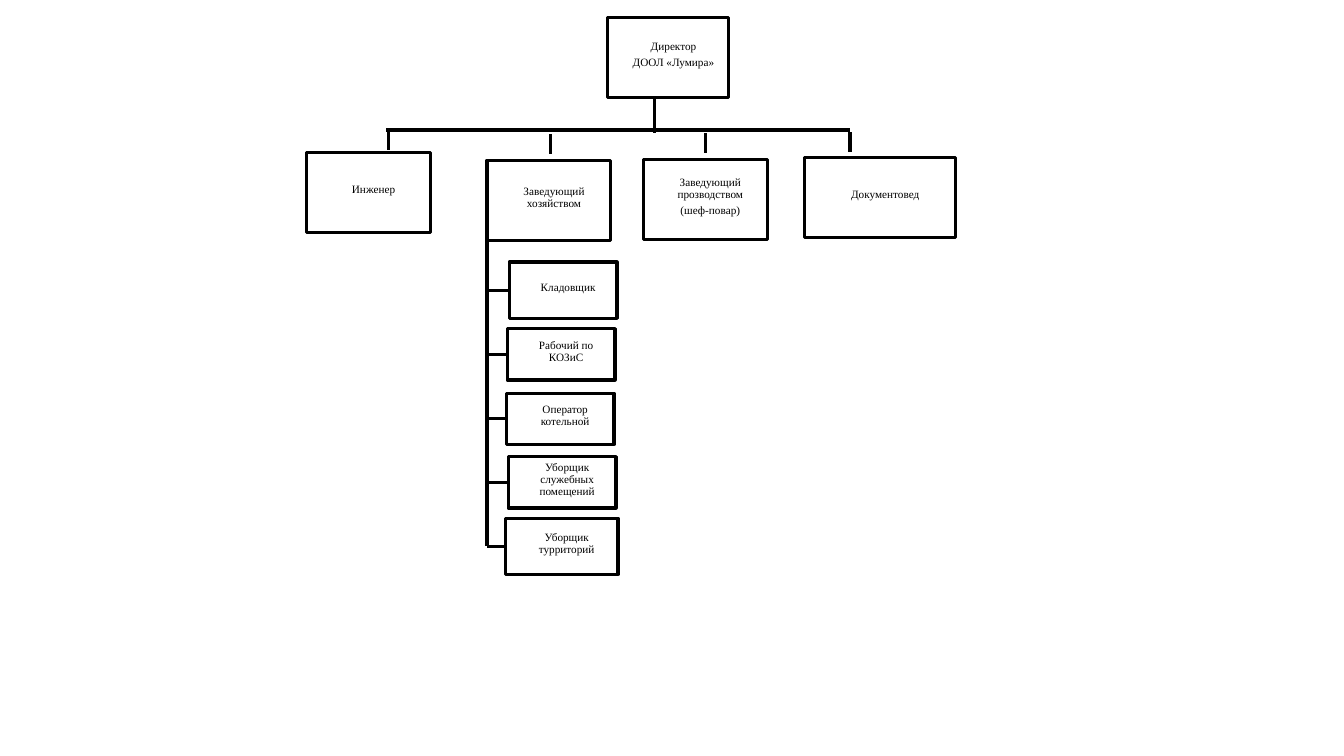
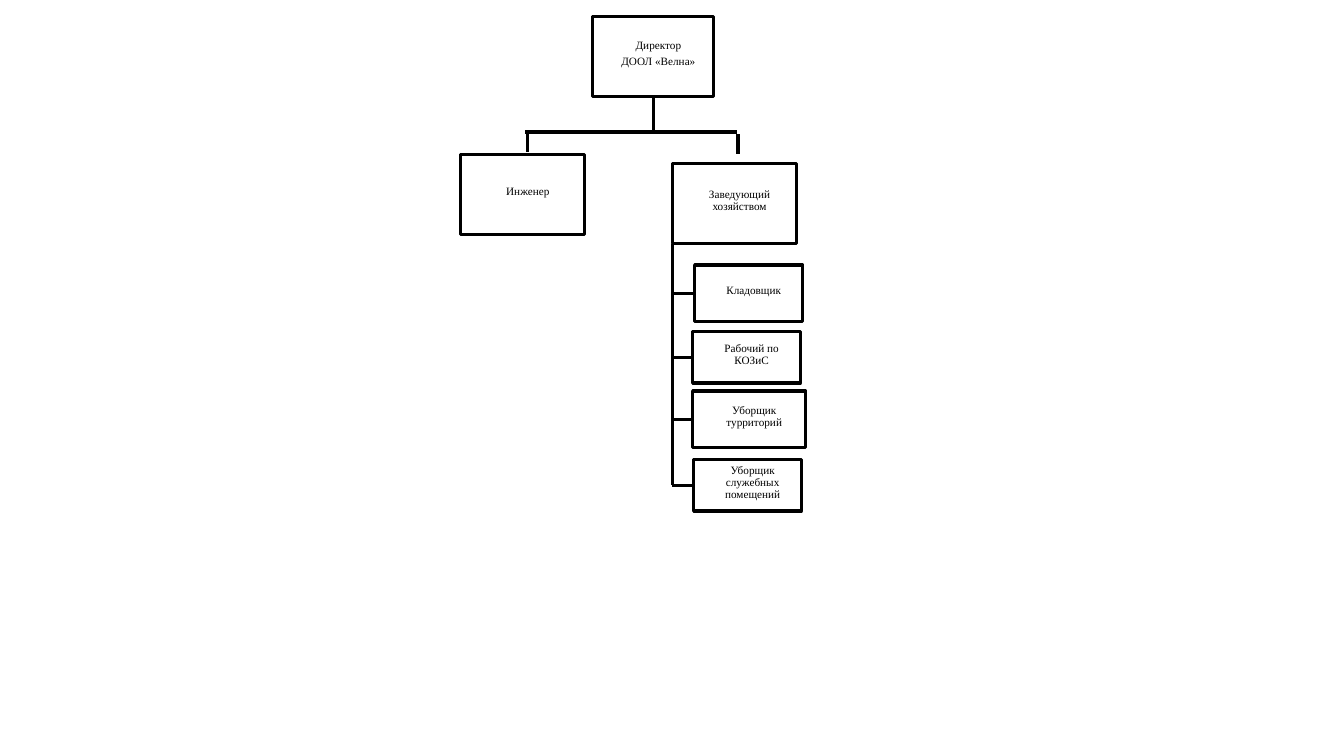
from pptx import Presentation
from pptx.dml.color import RGBColor
from pptx.enum.shapes import MSO_CONNECTOR, MSO_SHAPE
from pptx.enum.text import MSO_ANCHOR, PP_ALIGN
from pptx.oxml.ns import qn
from pptx.util import Inches, Pt
from lxml.etree import SubElement

COLORS = {"paper": "FFFFFF", "ink": "000000"}
FRAME_FORMAT = {
    "word_wrap": True,
    "vertical_anchor": MSO_ANCHOR.MIDDLE,
    "margin_left": Inches(0.2),
    "margin_top": Inches(0.01),
    "margin_right": Inches(0.1),
    "margin_bottom": Inches(0.06),
}
PARAGRAPH_FORMAT = {
    "alignment": PP_ALIGN.CENTER,
    "line_spacing": 0.9,
    "space_after": Pt(2.8),
}
FONT_FORMAT = {"name": "Times New Roman", "size": Pt(8)}
BOTTOM, LEFT = 2, 1
LINE_WIDTH = Pt(2.25)
DROP_LENGTH = 0.2
STEM_X, STEM_TOP, STEM_END = 6.49, 0.97, 1.32
JOIN_TOLERANCE = 0.02

# Boxes are (text, left, top, width, height); drops are (x, top).
CHARTS = [
    {
        "director": ("Директор\nДООЛ «Лумира»", 6.03, 0.17, 1.2, 0.8),
        "heads": [
            ("Инженер", 3.04, 1.51, 1.23, 0.8),
            ("Заведующий прозводством\n(шеф-повар)", 6.38, 1.58, 1.23, 0.8),
            ("Документовед", 7.98, 1.56, 1.5, 0.8),
        ],
        "steward": ("Заведующий хозяйством", 4.83, 1.59, 1.23, 0.8),
        "staff": [
            ("Кладовщик", 5.05, 2.6, 1.07, 0.56),
            ("Рабочий по КОЗиС", 5.03, 3.26, 1.07, 0.51),
            ("Оператор котельной", 5.02, 3.9, 1.07, 0.51),
            ("Уборщик служебных помещений", 5.04, 4.53, 1.07, 0.51),
            ("Уборщик турриторий", 5.01, 5.14, 1.12, 0.56),
        ],
        "bar": (3.83, 8.43, 1.29),
        "drops": [(3.85, 1.29), (5.46, 1.33), (7, 1.32), (8.43, 1.31)],
    },
    {
        "director": ("Директор\nДООЛ «Велна»", 5.88, 0.16, 1.2, 0.8),
        "heads": [("Инженер", 4.57, 1.53, 1.23, 0.8)],
        "steward": ("Заведующий хозяйством", 6.67, 1.62, 1.23, 0.8),
        "staff": [
            ("Кладовщик", 6.89, 2.63, 1.07, 0.56),
            ("Рабочий по КОЗиС", 6.87, 3.29, 1.07, 0.51),
            ("Уборщик турриторий", 6.87, 3.88, 1.12, 0.56),
            ("Уборщик служебных помещений", 6.88, 4.56, 1.07, 0.51),
        ],
        "bar": (5.21, 7.31, 1.31),
        "drops": [(5.23, 1.31), (7.32, 1.33)],
    },
]


def color(key):
    return RGBColor.from_string(COLORS[key])


def apply_format(target, values):
    for attribute, value in values.items():
        setattr(target, attribute, value)


class OrgChartDeck:
    def __init__(self):
        self.presentation = Presentation()
        self.presentation.slide_width = Inches(13.33)
        self.presentation.slide_height = Inches(7.5)
        self.slide = None

    def new_slide(self):
        blank_layout = self.presentation.slide_layouts[6]
        self.slide = self.presentation.slides.add_slide(blank_layout)

    def outline(self, line):
        line.color.rgb = color("ink")
        line.width = LINE_WIDTH

    def position(self, text, left, top, width, height):
        """Draw one job position as a framed box."""
        box = self.slide.shapes.add_shape(
            MSO_SHAPE.RECTANGLE, *map(Inches, (left, top, width, height)))
        box.shadow.inherit = False
        box.fill.solid()
        box.fill.fore_color.rgb = color("paper")
        self.outline(box.line)
        frame = box.text_frame
        apply_format(frame, FRAME_FORMAT)
        frame.text = text
        for paragraph in frame.paragraphs:
            apply_format(paragraph, PARAGRAPH_FORMAT)
            apply_format(paragraph.font, FONT_FORMAT)
            paragraph.font.color.rgb = color("ink")
        return box

    def link(self, x1, y1, x2, y2):
        connector = self.slide.shapes.add_connector(
            MSO_CONNECTOR.STRAIGHT, *map(Inches, (x1, y1, x2, y2)))
        self.outline(connector.line)
        SubElement(connector._element.spPr, qn("a:effectLst"))
        return connector

    def stem(self, director_data):
        """Draw the director and the line below, joined where it is centred."""
        director = self.position(*director_data)
        stem = self.link(STEM_X, STEM_TOP, STEM_X, STEM_END)
        _, left, _, width, _ = director_data
        if abs(left + width / 2 - STEM_X) <= JOIN_TOLERANCE:
            stem.begin_connect(director, BOTTOM)
            stem.end_x = stem.begin_x

    def staff_tree(self, steward, staff):
        """Draw a head whose left edge runs down to the staff below."""
        self.position(*steward)
        _, spine_x, top, _, height = steward
        for member in staff:
            _, left, member_top, _, member_height = member
            middle = member_top + member_height / 2
            box = self.position(*member)
            self.link(spine_x, middle, left, middle).end_connect(box, LEFT)
        self.link(spine_x, top + height, spine_x, middle)

    def org_chart(self, chart):
        self.new_slide()
        self.stem(chart["director"])
        for head in chart["heads"]:
            self.position(*head)
        self.staff_tree(chart["steward"], chart["staff"])
        bar_left, bar_right, bar_y = chart["bar"]
        self.link(bar_left, bar_y, bar_right, bar_y)
        for x, top in chart["drops"]:
            self.link(x, top, x, top + DROP_LENGTH)


def main():
    deck = OrgChartDeck()
    for chart in CHARTS:
        deck.org_chart(chart)
    deck.presentation.save("out.pptx")


if __name__ == "__main__":
    main()
